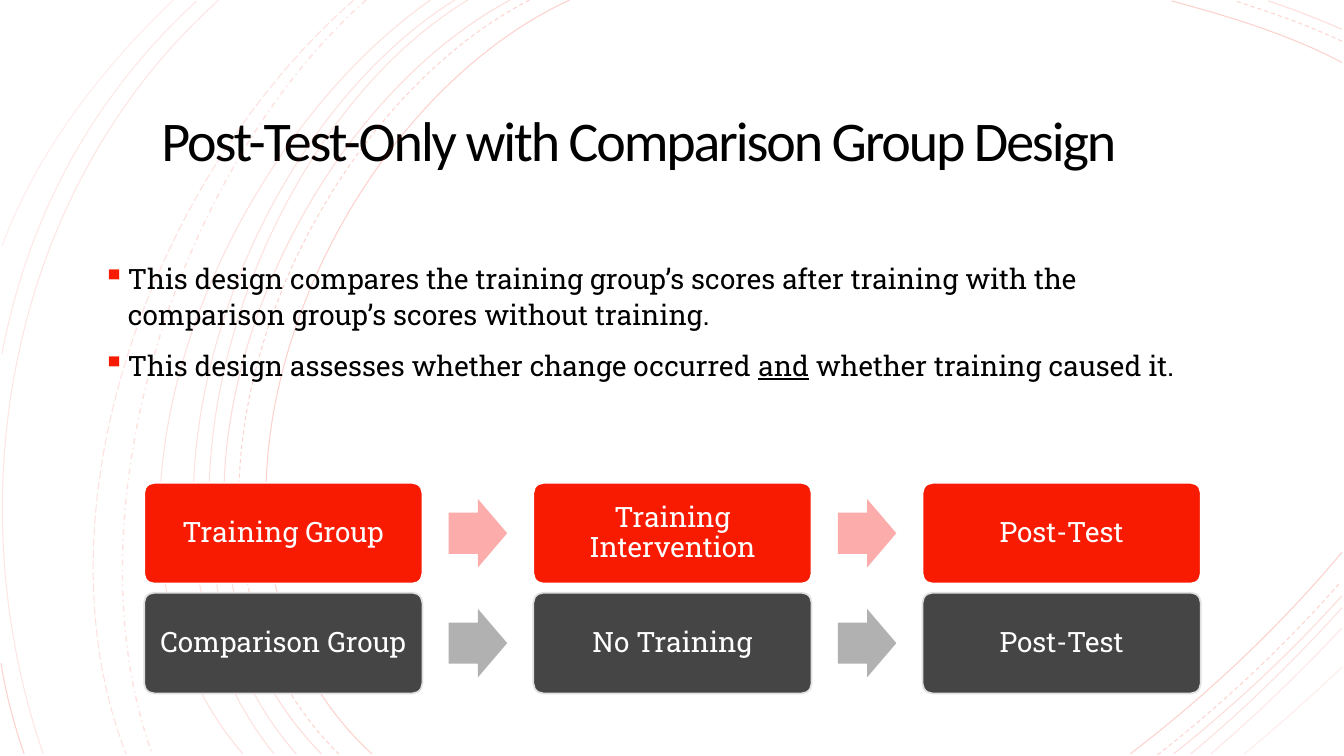
from dataclasses import dataclass

from lxml.etree import SubElement
from pptx import Presentation
from pptx.dml.color import RGBColor
from pptx.enum.dml import MSO_LINE
from pptx.enum.shapes import MSO_SHAPE
from pptx.enum.text import MSO_ANCHOR, MSO_AUTO_SIZE, PP_ALIGN
from pptx.oxml.ns import qn
from pptx.util import Pt

PX = 9144  # EMU; 100 px to the inch


@dataclass(frozen=True)
class Theme:
    paper: str = "FFFFFF"
    ink: str = "000000"
    red: str = "F81B02"
    pink: str = "FBACAB"
    charcoal: str = "454545"
    grey: str = "B1B1B1"
    edge: str = "E0E0E0"
    heading: str = "Calibri"
    text: str = "Roboto Slab"
    title_size: int = 40
    text_size: int = 20


THEME = Theme()

# Four Bézier points in px, opacity in percent, dash, width in points
SOLID, DASH = MSO_LINE.SOLID, MSO_LINE.DASH
ARCS = [
    ([(565, 0), (315, 115), (143, 540), (369, 748)], 20, SOLID, 0.75),
    ([(1331, 62), (1278, 34), (1218, 16), (1162, 1)], 20, SOLID, 0.75),
    ([(1121, 748), (1197, 690), (1269, 622), (1331, 548)], 20, SOLID, 0.75),
    ([(525, 0), (285, 125), (123, 537), (336, 748)], 18, DASH, 0.75),
    ([(1331, 41), (1297, 25), (1260, 12), (1225, 1)], 18, DASH, 0.75),
    ([(1148, 749), (1213, 698), (1275, 640), (1330, 577)], 18, DASH, 0.75),
    ([(506, 0), (270, 127), (110, 537), (319, 748)], 15, SOLID, 0.75),
    ([(1331, 29), (1307, 19), (1283, 9), (1258, 1)], 15, SOLID, 0.75),
    ([(1164, 748), (1223, 701), (1280, 648), (1331, 591)], 15, SOLID, 0.75),
    ([(464, 0), (244, 133), (110, 541), (294, 748)], 13, SOLID, 0.75),
    ([(1181, 748), (1234, 704), (1284, 655), (1331, 603)], 12, SOLID, 0.75),
    ([(451, 0), (231, 138), (97, 533), (272, 748)], 13, SOLID, 0.75),
    ([(1201, 748), (1246, 709), (1290, 667), (1331, 623)], 10, SOLID, 0.75),
    ([(427, 0), (217, 147), (53, 529), (241, 748)], 12, SOLID, 0.75),
    ([(1234, 748), (1267, 721), (1299, 692), (1331, 662)], 8, SOLID, 0.75),
    ([(363, 0), (176, 166), (65, 509), (151, 748)], 12, MSO_LINE.DASH_DOT, 1),
    ([(351, 0), (157, 169), (29, 499), (125, 748)], 12, MSO_LINE.LONG_DASH, 0.75),
    ([(217, 0), (11, 185), (-46, 490), (43, 748)], 11, SOLID, 0.75),
    ([(195, 1), (92, 96), (28, 214), (2, 351)], 10, SOLID, 0.75),
    ([(1, 658), (6, 689), (14, 719), (24, 748)], 20, SOLID, 0.75),
    ([(172, 0), (100, 69), (37, 150), (2, 244)], 8, SOLID, 0.75),
]

POINTS = [
    [("This design compares the training group’s scores after training with "
      "the comparison group’s scores without training.", False)],
    [("This design assesses whether change occurred ", False),
     ("and", True),
     (" whether training caused it.", False)],
]

FLOWS = [
    (["Training Group", "Training Intervention", "Post-Test"],
     THEME.red, THEME.paper, THEME.pink),
    (["Comparison Group", "No Training", "Post-Test"],
     THEME.charcoal, THEME.edge, THEME.grey),
]


def rgb(code):
    return RGBColor.from_string(code)


def px(*lengths):
    return [length * PX for length in lengths]


def write(para, text, *, font=THEME.text, size=THEME.text_size, color=THEME.ink,
          align=PP_ALIGN.LEFT, leading=1.0, underline=False, tracking=0):
    """Add a span; tracking is in hundredths of a point."""
    para.alignment = align
    para.line_spacing = leading
    span = para.add_run()
    span.text = text
    span.font.name = font
    span.font.size = Pt(size)
    span.font.color.rgb = rgb(color)
    if underline:
        span.font.underline = True
    if tracking:
        span.font._element.set("spc", str(tracking))


def set_frame(frame, left, top, right, bottom, anchor=MSO_ANCHOR.MIDDLE):
    frame.word_wrap = True
    frame.auto_size = MSO_AUTO_SIZE.NONE
    frame.vertical_anchor = anchor
    (frame.margin_left, frame.margin_top,
     frame.margin_right, frame.margin_bottom) = px(left, top, right, bottom)


def add_bullet(para):
    props = para._p.get_or_add_pPr()
    props.set("marL", str(25 * PX))
    props.set("indent", str(-25 * PX))
    color = SubElement(props, qn("a:buClr"))
    SubElement(color, qn("a:srgbClr"), val=THEME.red)
    SubElement(props, qn("a:buSzPct"), val="110000")
    SubElement(props, qn("a:buChar"), char="▪")


def add_arc(shapes, points, opacity, dash, width):
    builder = shapes.build_freeform(*points[0], scale=PX)
    builder.add_line_segments(points[1:], close=False)
    arc = builder.convert_to_shape()
    outline = arc.element.xpath(".//a:path")[0]
    curve = SubElement(outline, qn("a:cubicBezTo"))
    for segment in outline.findall(qn("a:lnTo")):
        curve.append(segment[0])
        outline.remove(segment)
    arc.shadow.inherit = False
    arc.fill.background()
    arc.line.width = Pt(width)
    arc.line.dash_style = dash
    arc.line.color.rgb = rgb(THEME.red)
    color = arc.element.xpath(".//a:ln//a:srgbClr")[0]
    SubElement(color, qn("a:alpha"), val=str(opacity * 1000))


def add_backdrop(page):
    shapes = page.shapes.add_group_shape().shapes
    for arc in ARCS:
        add_arc(shapes, *arc)


def place_title(page, left, top, width, height):
    title = page.shapes.title
    title.left, title.top, title.width, title.height = px(left, top, width, height)
    set_frame(title.text_frame, 25, 25, 25, 25)
    write(title.text_frame.paragraphs[0],
          "Post-Test-Only with Comparison Group Design",
          font=THEME.heading, size=THEME.title_size, align=PP_ALIGN.CENTER,
          leading=0.85, tracking=-150)


def add_points(page, left, top, width, height):
    frame = page.shapes.add_textbox(*px(left, top, width, height)).text_frame
    set_frame(frame, 10, 21, 20, 5, MSO_ANCHOR.TOP)
    for index, spans in enumerate(POINTS):
        para = frame.add_paragraph() if index else frame.paragraphs[0]
        add_bullet(para)
        if index:
            para.space_before = Pt(10)
        for text, underline in spans:
            write(para, text, leading=1.08, underline=underline)


def add_block(shapes, kind, box, fill, adjustments):
    block = shapes.add_shape(kind, *px(*box))
    for index, value in enumerate(adjustments):
        block.adjustments[index] = value
    block.shadow.inherit = False
    block.fill.solid()
    block.fill.fore_color.rgb = rgb(fill)
    block.line.fill.background()
    return block


def add_flow(page, left, top, width, height, steps, fill, edge, arrow_fill):
    """Lay out one row of steps with an arrow centred in each gap."""
    step_width, arrow_width, arrow_height = 276, 58, 68
    pitch = (width - step_width) // (len(steps) - 1)
    gap = pitch - step_width
    shapes = page.shapes.add_group_shape().shapes
    for index, label in enumerate(steps):
        x = left + index * pitch
        if index:
            add_block(shapes, MSO_SHAPE.RIGHT_ARROW,
                      (x - (gap + arrow_width) // 2,
                       top + (height - arrow_height) // 2,
                       arrow_width, arrow_height), arrow_fill, [0.6, 0.5])
        step = add_block(shapes, MSO_SHAPE.ROUNDED_RECTANGLE,
                         (x, top, step_width, height), fill, [0.1])
        step.line.color.rgb = rgb(edge)
        step.line.width = Pt(1.25)
        set_frame(step.text_frame, 8, 8, 8, 8)
        write(step.text_frame.paragraphs[0], label, color=THEME.paper,
              align=PP_ALIGN.CENTER, leading=0.9)


def main():
    deck = Presentation()
    deck.slide_width, deck.slide_height = px(1333, 750)
    page = deck.slides.add_slide(deck.slide_layouts.get_by_name("Title Only"))
    page.background.fill.solid()
    page.background.fill.fore_color.rgb = rgb(THEME.paper)
    add_backdrop(page)
    place_title(page, 92, 69, 1083, 148)
    add_points(page, 92, 236, 1150, 425)
    for index, flow in enumerate(FLOWS):
        add_flow(page, 143, 479 + index * 109, 1048, 100, *flow)
    deck.save("out.pptx")


if __name__ == "__main__":
    main()
